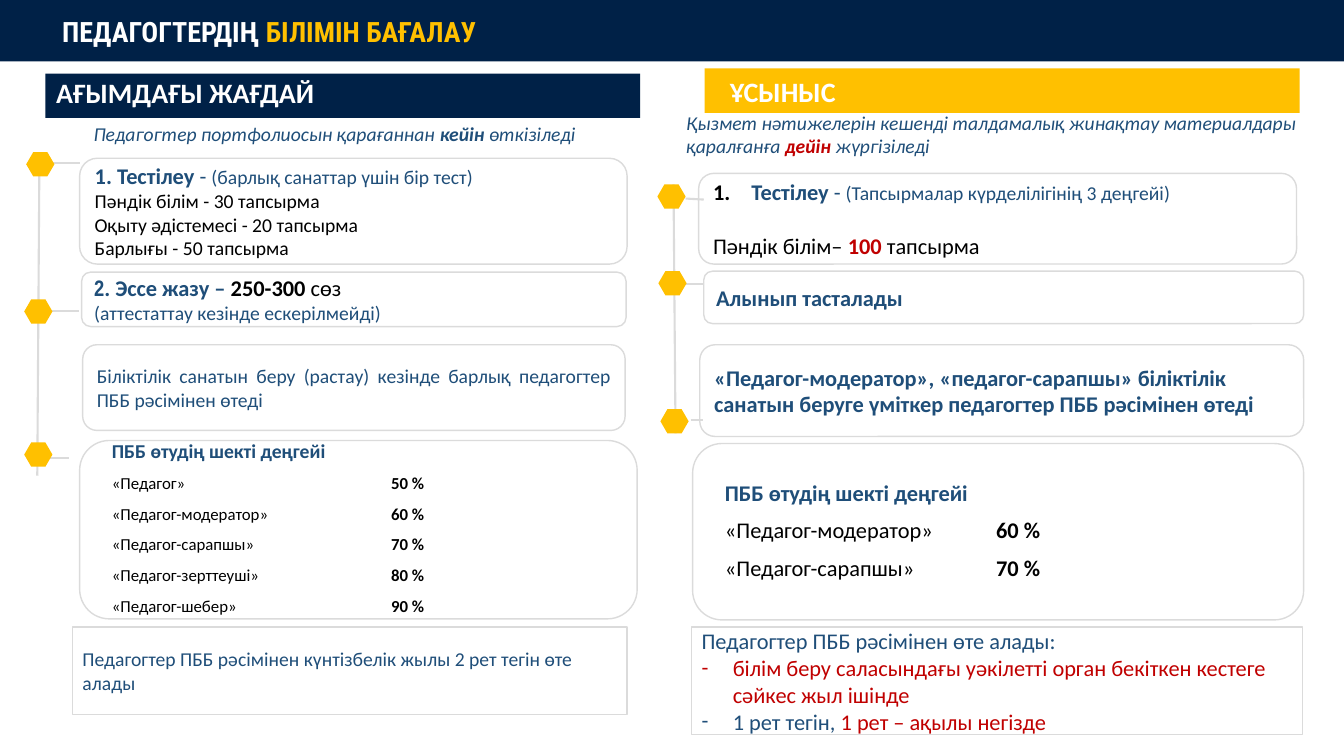
from lxml import etree
from pptx import Presentation
from pptx.dml.color import RGBColor
from pptx.enum.shapes import MSO_CONNECTOR, MSO_SHAPE
from pptx.enum.text import MSO_ANCHOR, PP_ALIGN
from pptx.oxml.ns import qn
from pptx.util import Inches, Pt

NAVY = RGBColor(0x00, 0x21, 0x47)
GOLD = RGBColor(0xFF, 0xC0, 0x00)
BLUE = RGBColor(0x1F, 0x4E, 0x79)
RED = RGBColor(0xC0, 0x00, 0x00)
GREY = RGBColor(0xDB, 0xDB, 0xDB)
BLACK = RGBColor(0, 0, 0)
WHITE = RGBColor(0xFF, 0xFF, 0xFF)
BODY_FONT = "Calibri"
TITLE_FONT = "Roboto Condensed"
NO_STYLE_TABLE = "{2D5ABB26-0587-4C30-8999-92F81FD0307C}"

# Box: left, top, width, height in inches.
# Run: text, size, colour, style ("b" bold, "i" italic), optional font.
# Paragraph: (runs, options); options: align, bullet, indent, before.
BARS = [((6.99, 0.68, 5.9, 0.44), GOLD), ((0.45, 0.73, 5.9, 0.44), NAVY),
        ((0, 0, 13.33, 0.61), NAVY)]

TITLE = ((0.48, 0.09, 4.38, 0.44), [([
    ("ПЕДАГОГТЕРДІҢ ", 20, WHITE, "b", TITLE_FONT),
    ("БІЛІМІН БАҒАЛАУ", 20, GOLD, "b", TITLE_FONT)], {"align": PP_ALIGN.CENTER})])

HEADINGS = [
    ((0.46, 0.7, 5.47, 0.44), [([("АҒЫМДАҒЫ ЖАҒДАЙ", 20, WHITE, "b")], {})]),
    ((7.14, 0.69, 5.47, 0.44), [([("ҰСЫНЫС", 20, WHITE, "b")], {})]),
]
SUBTITLES = [
    ((0.83, 1.16, 5.6, 0.34), [([
        ("Педагогтер портфолиосын қарағаннан ", 14, BLUE, "i"),
        ("кейін ", 14, BLUE, "bi"), ("өткізіледі", 14, BLUE, "i")], {})]),
    ((6.71, 1.05, 6.51, 0.57), [([
        ("Қызмет нәтижелерін кешенді талдамалық жинақтау материалдары қаралғанға ",
         14, BLUE, "i"),
        ("дейін ", 14, RED, "bi"), ("жүргізіледі", 14, BLUE, "i")], {})]),
]

JUSTIFIED = {"align": PP_ALIGN.JUSTIFY}
CARDS = [
    ((0.79, 1.57, 5.43, 1.05), [
        ([("1. Тестілеу", 16, BLUE, "b"), (" - ", 16, BLUE, ""),
          ("(барлық санаттар үшін бір тест)", 14, BLUE, "")], {}),
        ([("Пәндік білім - 30 тапсырма", 14, BLACK, "")], {}),
        ([("Оқыту әдістемесі - 20 тапсырма", 14, BLACK, "")], {}),
        ([("Барлығы - 50 тапсырма", 14, BLACK, "")], {})]),
    ((0.81, 2.7, 5.4, 0.54), [
        ([("2", 16, BLUE, "b", "Arial Narrow"), (". Эссе жазу – ", 16, BLUE, "b"),
          ("250-300 ", 16, BLACK, "b"), ("сөз", 16, BLACK, "")], JUSTIFIED),
        ([("(аттестаттау кезінде ескерілмейді)", 14, BLUE, "")], JUSTIFIED)]),
    ((0.82, 3.42, 5.38, 0.85), [
        ([("Біліктілік санатын беру (растау) кезінде барлық педагогтер ПББ "
           "рәсімінен өтеді", 14, BLUE, "")], JUSTIFIED)]),
    ((0.79, 4.37, 5.53, 1.77), []),
    ((6.93, 1.72, 5.93, 0.9), [
        ([("Тестілеу", 16, BLUE, "b"), (" - ", 16, BLUE, ""),
          ("(Тапсырмалар күрделілігінің 3 деңгейі)", 14, BLUE, "")],
         {"bullet": "1.", "indent": 0.38}),
        ([("Пәндік білім– ", 16, BLACK, ""), ("100 ", 16, RED, "b"),
          ("тапсырма", 16, BLACK, "")], {"before": 19.5})]),
    ((6.98, 2.69, 5.95, 0.52), [([("Алынып тасталады", 16, BLUE, "b")], JUSTIFIED)]),
    ((6.94, 3.42, 5.99, 0.91), [
        ([("«Педагог-модератор», «педагог-сарапшы» біліктілік санатын беруге "
           "үміткер педагогтер ПББ рәсімінен өтеді", 16, BLUE, "b")], {})]),
    ((6.87, 4.4, 6.06, 1.75), []),
]

DASHED = {"bullet": "-", "indent": 0.31}
NOTES = [
    ((0.72, 6.22, 5.5, 0.87), [
        ([("Педагогтер ПББ рәсімінен күнтізбелік жылы 2 рет тегін өте алады",
           14, BLUE, "")], {})]),
    ((6.86, 6.22, 6.06, 1.07), [
        ([("Педагогтер ПББ рәсімінен өте алады:", 16, BLUE, "")], {}),
        ([("білім беру саласындағы уәкілетті орган бекіткен кестеге сәйкес жыл ішінде",
           16, RED, "")], DASHED),
        ([("1 рет тегін, ", 16, BLUE, ""), ("1 рет – ақылы негізде", 16, RED, "")],
         DASHED)]),
]

# Left, top, column widths, heading size, heading height, row size, row height, rows.
THRESHOLD_HEADING = "ПББ өтудің шекті деңгейі"
THRESHOLDS = [
    (1.01, 4.31, (2.77, 2.53), 14, 0.34, 12, 0.3,
     [("«Педагог»", "50 %"), ("«Педагог-модератор»", "60 %"),
      ("«Педагог-сарапшы»", "70 %"), ("«Педагог-зерттеуші»", "80 %"),
      ("«Педагог-шебер»", "90 %")]),
    (7.09, 4.71, (2.69, 2.61), 16, 0.37, 16, 0.37,
     [("«Педагог-модератор»", "60 %"), ("«Педагог-сарапшы»", "70 %")]),
]

RAILS = [(6.68, 1.83, 6.7, 4.3), (0.39, 1.74, 0.37, 4.72)]
BRANCHES = [(0.51, 3.09, 0.78, 3.09), (0.51, 1.62, 0.79, 1.62), (0.41, 4.54, 0.68, 4.54),
            (6.71, 2.82, 6.98, 2.82), (6.8, 1.97, 6.98, 1.98), (6.85, 4.17, 6.97, 4.17)]
MARKERS = [(0.26, 1.51), (0.24, 2.97), (0.24, 4.39), (6.52, 1.83), (6.53, 2.69), (6.55, 4.06)]
MARKER_SIZE = (0.28, 0.24)


def add_runs(paragraph, runs):
    for text, size, color, style, *font in runs:
        run = paragraph.add_run()
        run.text = text
        run.font.name = font[0] if font else BODY_FONT
        run.font.size = Pt(size)
        run.font.bold = "b" in style
        run.font.italic = "i" in style
        run.font.color.rgb = color


def add_bullet(paragraph, bullet, indent):
    """Give the paragraph a hanging dash, or a black automatic number for "1."."""
    properties = paragraph._p.get_or_add_pPr()
    properties.set("marL", str(Inches(indent)))
    properties.set("indent", str(-Inches(indent)))
    if bullet == "1.":
        color = etree.SubElement(properties, qn("a:buClr"))
        etree.SubElement(color, qn("a:srgbClr"), val=str(BLACK))
        etree.SubElement(properties, qn("a:buFont"), typeface="+mj-lt")
        etree.SubElement(properties, qn("a:buAutoNum"), type="arabicPeriod")
    else:
        etree.SubElement(properties, qn("a:buFont"), typeface=BODY_FONT)
        etree.SubElement(properties, qn("a:buChar"), char=bullet)


def fill_text(shape, paragraphs, anchor=MSO_ANCHOR.MIDDLE, wrap=True):
    frame = shape.text_frame
    frame.word_wrap = wrap
    frame.vertical_anchor = anchor
    for index, (runs, options) in enumerate(paragraphs):
        paragraph = frame.add_paragraph() if index else frame.paragraphs[0]
        paragraph.alignment = options.get("align", PP_ALIGN.LEFT)
        if "before" in options:
            paragraph.space_before = Pt(options["before"])
        if "bullet" in options:
            add_bullet(paragraph, options["bullet"], options["indent"])
        add_runs(paragraph, runs)


def add_box(slide, kind, box, fill=None, line=None):
    shape = slide.shapes.add_shape(kind, *map(Inches, box))
    shape.shadow.inherit = False
    if fill is None:
        shape.fill.background()
    else:
        shape.fill.solid()
        shape.fill.fore_color.rgb = fill
    if line is None:
        shape.line.fill.background()
    else:
        shape.line.color.rgb = line
        shape.line.width = Pt(1)
    return shape


def add_textbox(slide, box, paragraphs, **layout):
    fill_text(slide.shapes.add_textbox(*map(Inches, box)), paragraphs, **layout)


def add_line(slide, ends):
    line = slide.shapes.add_connector(MSO_CONNECTOR.STRAIGHT, *map(Inches, ends))
    line.line.color.rgb = GREY
    line.line.width = Pt(1.5)
    etree.SubElement(line._element.spPr, qn("a:effectLst"))


def add_thresholds(slide, left, top, widths, head_size, head_height, size, height, rows):
    box = (left, top, sum(widths), head_height + height * len(rows))
    table = slide.shapes.add_table(len(rows) + 1, 2, *map(Inches, box)).table
    table._tbl.tblPr.find(qn("a:tableStyleId")).text = NO_STYLE_TABLE
    table.first_row = table.horz_banding = False
    for column, width in zip(table.columns, widths):
        column.width = Inches(width)
    for index, row in enumerate(table.rows):
        row.height = Inches(height if index else head_height)
    for cell in table.iter_cells():
        cell.fill.background()
    table.cell(0, 0).merge(table.cell(0, 1))
    add_runs(table.cell(0, 0).text_frame.paragraphs[0],
             [(THRESHOLD_HEADING, head_size, BLUE, "b")])
    for index, row in enumerate(rows, 1):
        for column, (text, style) in enumerate(zip(row, ("", "b"))):
            add_runs(table.cell(index, column).text_frame.paragraphs[0],
                     [(text, size, BLACK, style)])


def main():
    presentation = Presentation()
    presentation.slide_width, presentation.slide_height = Inches(13.33), Inches(7.5)
    slide = presentation.slides.add_slide(presentation.slide_layouts[6])
    for box, color in BARS:
        add_box(slide, MSO_SHAPE.RECTANGLE, box, color)
    for ends in RAILS + BRANCHES:
        add_line(slide, ends)
    for box, paragraphs in CARDS:
        fill_text(add_box(slide, MSO_SHAPE.ROUNDED_RECTANGLE, box, line=GREY), paragraphs)
    for box, paragraphs in NOTES:
        note = add_box(slide, MSO_SHAPE.RECTANGLE, box, WHITE, GREY)
        note.text_frame.margin_top = note.text_frame.margin_bottom = 0
        fill_text(note, paragraphs)
    for thresholds in THRESHOLDS:
        add_thresholds(slide, *thresholds)
    for box, paragraphs in HEADINGS:
        add_textbox(slide, box, paragraphs)
    for box, paragraphs in SUBTITLES:
        add_textbox(slide, box, paragraphs, anchor=MSO_ANCHOR.TOP)
    for corner in MARKERS:
        marker = add_box(slide, MSO_SHAPE.HEXAGON, corner + MARKER_SIZE, GOLD)
        marker.adjustments[0] = 0.29
    add_textbox(slide, *TITLE, anchor=MSO_ANCHOR.TOP, wrap=False)
    presentation.save("out.pptx")


if __name__ == "__main__":
    main()
